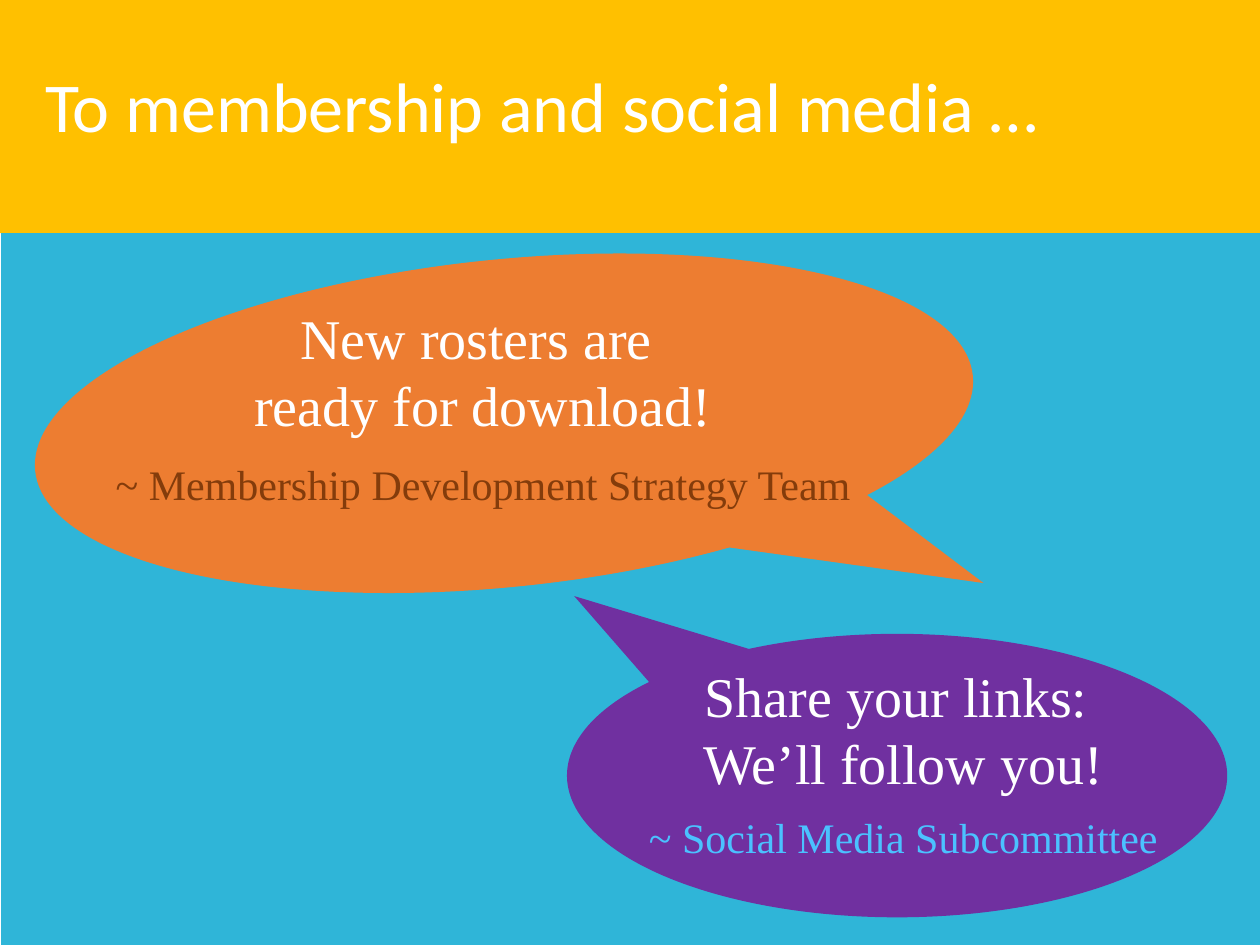
"""Build a slide with a title band and two speech-bubble announcements."""
from pptx import Presentation
from pptx.dml.color import RGBColor
from pptx.enum.shapes import MSO_SHAPE as Shape
from pptx.enum.text import PP_ALIGN as Align
from pptx.util import Inches, Pt

COLORS = {
    "white": "FFFFFF",
    "gold": "FFC000",
    "blue": "2FB5D8",
    "purple": "7030A0",
    "sky": "4BC1FF",
    "orange": "ED7D31",
    "brown": "843C0B",
}
TITLE = "To membership and social media …"
BANDS = [((0, 0, 10, 1.85), "gold"), ((0.01, 1.85, 10, 5.65), "blue")]
TAIL = (-0.489, 0.633)
CALLOUTS = [
    {
        "bubble": (4.5, 5.03, 5.24, 2.25), "rotation": 180, "flip": "flipH",
        "fill": "purple", "text_box": (4.76, 5.2, 4.82, 1.76),
        "message": ["Share your links: ", "We’ll follow you!"],
        "sender": "~ Social Media Subcommittee", "sender_color": "sky", "gap": 9,
    },
    {
        "bubble": (0.26, 2.06, 7.48, 2.6), "rotation": 174.2, "flip": "flipV",
        "fill": "orange", "text_box": (0.8, 2.36, 6.07, 1.76),
        "message": ["New rosters are ", "ready for download!"],
        "sender": "~ Membership Development Strategy Team",
        "sender_color": "brown", "gap": 12,
    },
]


def color(name):
    return RGBColor.from_string(COLORS[name])


def add_filled_shape(slide, kind, box, fill):
    shape = slide.shapes.add_shape(kind, *map(Inches, box))
    shape.shadow.inherit = False
    shape.fill.solid()
    shape.fill.fore_color.rgb = color(fill)
    shape.line.fill.background()
    return shape


def add_text(slide, box, lines):
    text_frame = slide.shapes.add_textbox(*map(Inches, box)).text_frame
    text_frame.word_wrap = True
    text_frame.text = "\n".join(text for text, *_ in lines)
    for paragraph, (_, size, font_name, font_color) in zip(text_frame.paragraphs, lines):
        font = paragraph.runs[0].font
        font.size, font.name = Pt(size), font_name
        font.color.rgb = color(font_color)
    return text_frame.paragraphs


def add_callout(slide, callout):
    bubble = add_filled_shape(
        slide, Shape.OVAL_CALLOUT, callout["bubble"], callout["fill"])
    bubble.rotation = callout["rotation"]
    bubble.element.spPr.xfrm.set(callout["flip"], "1")
    for index, value in enumerate(TAIL):
        bubble.adjustments[index] = value
    serif = "Times New Roman"
    lines = [(text, 32, serif, "white") for text in callout["message"]]
    lines.append((callout["sender"], 24, serif, callout["sender_color"]))
    paragraphs = add_text(slide, callout["text_box"], lines)
    for paragraph in paragraphs:
        paragraph.alignment = Align.CENTER
    paragraphs[-1].space_before = Pt(callout["gap"])


def main():
    presentation = Presentation()
    presentation.slide_width, presentation.slide_height = Inches(10), Inches(7.5)
    slide = presentation.slides.add_slide(presentation.slide_layouts[6])
    for box, fill in BANDS:
        add_filled_shape(slide, Shape.RECTANGLE, box, fill)
    add_text(slide, (0.26, 0.45, 9.33, 0.77), [(TITLE, 40, "Calibri", "white")])
    for callout in CALLOUTS:
        add_callout(slide, callout)
    presentation.save("out.pptx")


if __name__ == "__main__":
    main()
